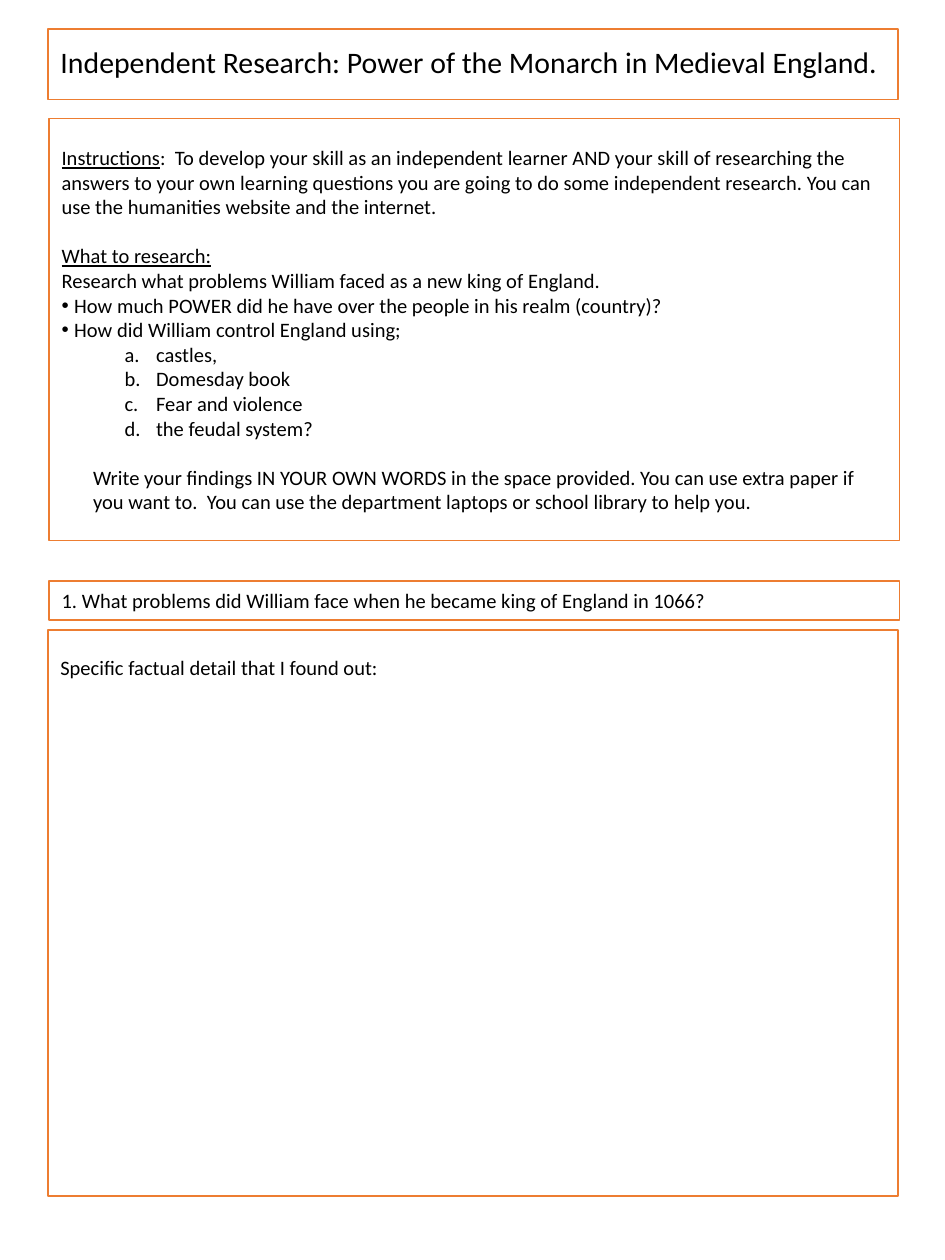
import pptx
import pptx.dml.color
import pptx.enum.shapes
import pptx.enum.text
import pptx.oxml
import pptx.oxml.ns
import pptx.util

Inches = pptx.util.Inches
Pt = pptx.util.Pt

COLORS = {"fill": "FFFFFF", "border": "ED7D31", "text": "000000"}
FONT = "Calibri"
BODY_SIZE = 11.7
LINE_GAP = 14
BOX_WIDTH = 6.75

QUESTIONS = [
    "How much POWER did he have over the people in his realm (country)?",
    "How did William control England using;",
]
METHODS = ["castles,", "Domesday book", "Fear and violence", "the feudal system?"]


def rgb(name):
    return pptx.dml.color.RGBColor.from_string(COLORS[name])


def style_box(sp, anchor):
    """Give a box its white fill, orange border and text settings."""
    sp.fill.solid()
    sp.fill.fore_color.rgb = rgb("fill")
    sp.line.color.rgb = rgb("border")
    sp.line.width = Pt(1)
    tf = sp.text_frame
    tf.word_wrap = True
    tf.auto_size = pptx.enum.text.MSO_AUTO_SIZE.NONE
    tf.vertical_anchor = anchor


def add_box(slide, left, top, height, anchor=pptx.enum.text.MSO_ANCHOR.MIDDLE):
    sp = slide.shapes.add_shape(
        pptx.enum.shapes.MSO_SHAPE.RECTANGLE,
        Inches(left), Inches(top), Inches(BOX_WIDTH), Inches(height))
    sp.shadow.inherit = False
    style_box(sp, anchor)
    return sp


def format_run(r, size=BODY_SIZE, underline=False):
    r.font.name = FONT
    r.font.size = Pt(size)
    r.font.color.rgb = rgb("text")
    r.font.underline = underline


def add_paragraph(tf, text, heading="", before=0):
    """Write one left-aligned paragraph, with an optional underlined heading."""
    p = tf.paragraphs[0] if not tf.text else tf.add_paragraph()
    p.alignment = pptx.enum.text.PP_ALIGN.LEFT
    p.space_before = Pt(before)
    for part, underline in ((heading, True), (text, False)):
        if part:
            r = p.add_run()
            r.text = part
            format_run(r, underline=underline)
    return p


def set_indent(p, margin, first=0):
    pPr = p._p.get_or_add_pPr()
    pPr.set("marL", str(Inches(margin)))
    pPr.set("indent", str(Inches(first)))
    return pPr


def add_list(tf, items, margin, hanging, marker, level=0):
    """Write list items; marker is the bullet element's name and attribute."""
    for item in items:
        p = add_paragraph(tf, item)
        p.level = level
        pPr = set_indent(p, margin, -hanging)
        tag, attribute, value = marker
        if tag == "a:buChar":
            font = pptx.oxml.parse_xml(
                f'<a:buFont {pptx.oxml.ns.nsdecls("a")} typeface="Arial"/>')
            pPr.append(font)
        pPr.append(pptx.oxml.parse_xml(
            f'<{tag} {pptx.oxml.ns.nsdecls("a")} {attribute}="{value}"/>'))


def add_title(slide):
    sp = slide.shapes.title
    sp.left, sp.top = Inches(0.38), Inches(0.23)
    sp.width, sp.height = Inches(BOX_WIDTH), Inches(0.56)
    style_box(sp, pptx.enum.text.MSO_ANCHOR.MIDDLE)
    sp.text_frame.text = "Independent Research: Power of the Monarch in Medieval England."
    p = sp.text_frame.paragraphs[0]
    p.alignment = pptx.enum.text.PP_ALIGN.LEFT
    p.line_spacing = 0.9
    format_run(p.runs[0], size=17)


def add_instructions(slide):
    tf = add_box(slide, 0.39, 0.94, 3.35).text_frame
    add_paragraph(
        tf,
        ":  To develop your skill as an independent learner AND your skill of "
        "researching the answers to your own learning questions you are going to "
        "do some independent research. You can use the humanities website and "
        "the internet.",
        heading="Instructions")
    add_paragraph(tf, "", heading="What to research:", before=LINE_GAP)
    add_paragraph(tf, "Research what problems William faced as a new king of England.")
    add_list(tf, QUESTIONS, 0.1, 0.1, ("a:buChar", "char", "•"))
    add_list(tf, METHODS, 0.75, 0.25, ("a:buAutoNum", "type", "alphaLcPeriod"), level=1)
    p = add_paragraph(
        tf,
        "Write your findings IN YOUR OWN WORDS in the space provided. You can use "
        "extra paper if you want to.  You can use the department laptops or "
        "school library to help you.",
        before=LINE_GAP)
    set_indent(p, 0.25)


def main():
    prs = pptx.Presentation()
    prs.slide_width, prs.slide_height = Inches(7.5), Inches(10)
    slide = prs.slides.add_slide(prs.slide_layouts[5])

    # Title and task
    add_title(slide)
    add_instructions(slide)

    # Question
    question = add_box(slide, 0.39, 4.61, 0.31)
    add_paragraph(question.text_frame,
                  "1. What problems did William face when he became king of England in 1066?")

    # Writing space, with its prompt at the top
    answer = add_box(slide, 0.38, 5, 4.49, pptx.enum.text.MSO_ANCHOR.TOP)
    answer.text_frame.margin_top = Inches(0.2)
    add_paragraph(answer.text_frame, "Specific factual detail that I found out:")

    prs.save("out.pptx")


if __name__ == "__main__":
    main()
